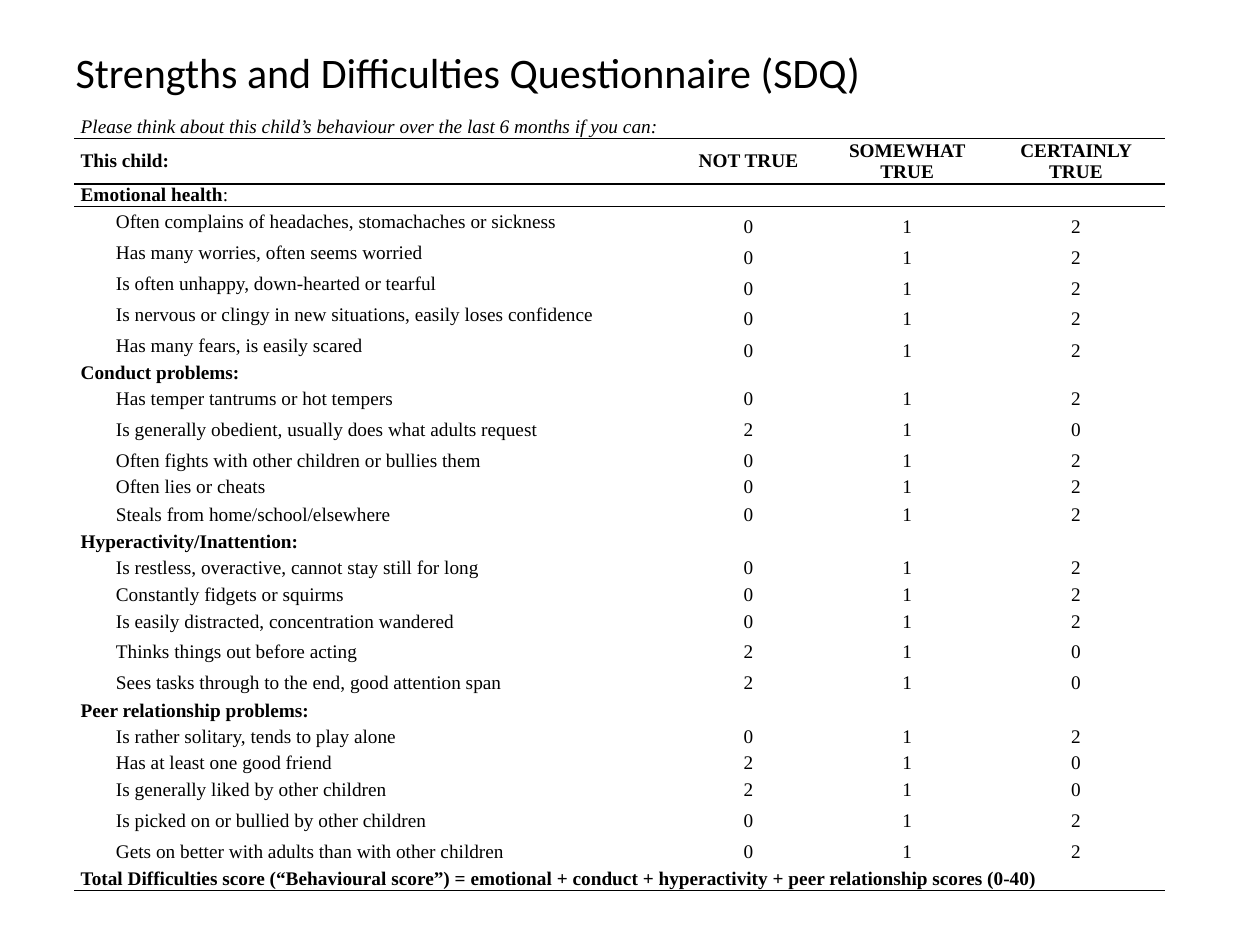
"""Build the Strengths and Difficulties Questionnaire slide."""
from itertools import cycle

from lxml.etree import SubElement
from pptx import Presentation
from pptx.dml.color import RGBColor
from pptx.enum.text import MSO_ANCHOR, PP_ALIGN
from pptx.oxml.ns import qn
from pptx.util import Inches, Pt

COLORS = {"text": "000000", "rule": "000000", "cell": "FFFFFF"}
NO_STYLE = "{2D5ABB26-0587-4C30-8999-92F81FD0307C}"
COLUMN_WIDTHS = [4.72, 1.26, 1.26, 1.42]
LINE_HEIGHT, HEADER_HEIGHT = 0.18, 0.36
INTRO = "Please think about this child’s behaviour over the last 6 months if you can:"
HEADERS = ["This child:", "NOT TRUE", "SOMEWHAT TRUE", "CERTAINLY TRUE"]
TOTAL = ("Total Difficulties score (“Behavioural score”) = emotional + conduct + "
         "hyperactivity + peer relationship scores (0-40)")
SCALES = {
    "Emotional health": [
        "Often complains of headaches, stomachaches or sickness",
        "Has many worries, often seems worried",
        "Is often unhappy, down-hearted or tearful",
        "Is nervous or clingy in new situations, easily loses confidence",
        "Has many fears, is easily scared",
    ],
    "Conduct problems": [
        "Has temper tantrums or hot tempers",
        "Is generally obedient, usually does what adults request",
        "Often fights with other children or bullies them",
        "Often lies or cheats",
        "Steals from home/school/elsewhere",
    ],
    "Hyperactivity/Inattention": [
        "Is restless, overactive, cannot stay still for long",
        "Constantly fidgets or squirms",
        "Is easily distracted, concentration wandered",
        "Thinks things out before acting",
        "Sees tasks through to the end, good attention span",
    ],
    "Peer relationship problems": [
        "Is rather solitary, tends to play alone",
        "Has at least one good friend",
        "Is generally liked by other children",
        "Is picked on or bullied by other children",
        "Gets on better with adults than with other children",
    ],
}
REVERSED = {
    "Is generally obedient, usually does what adults request",
    "Thinks things out before acting",
    "Sees tasks through to the end, good attention span",
    "Has at least one good friend",
    "Is generally liked by other children",
}
COMPACT = {"Often lies or cheats", "Constantly fidgets or squirms", "Has at least one good friend"}
BOTTOM_HEADINGS = {"Hyperactivity/Inattention", "Peer relationship problems"}


def add_text(p, text, font="Times New Roman", size=11, bold=False, italic=False,
             align=PP_ALIGN.LEFT, indent=0):
    """Add a formatted run to a paragraph."""
    p.alignment = align
    if indent:
        pPr = p._p.get_or_add_pPr()
        pPr.set("marL", str(Inches(indent)))
        pPr.set("indent", "0")
    r = p.add_run()
    r.text = text
    r.font.name, r.font.size = font, Pt(size)
    r.font.bold, r.font.italic = bold, italic
    r.font.color.rgb = RGBColor.from_string(COLORS["text"])


class SlideBuilder:
    """Hold the slide and its style, with a method for each kind of element."""

    def __init__(self, prs):
        """Add a title-only slide."""
        self.s = prs.slides.add_slide(prs.slide_layouts[5])
        self.rule_width = Pt(1)

    def title(self, text, x, y, w, h):
        """Place and fill the title placeholder."""
        sp = self.s.shapes.title
        sp.left, sp.top, sp.width, sp.height = (Inches(v) for v in (x, y, w, h))
        tf = sp.text_frame
        tf.word_wrap = True
        tf.vertical_anchor = MSO_ANCHOR.MIDDLE
        add_text(tf.paragraphs[0], text, font="Calibri", size=24)

    def table(self, x, y, widths, heights):
        """Add an unstyled table with the given grid."""
        table = self.s.shapes.add_table(
            len(heights), len(widths), Inches(x), Inches(y),
            Inches(sum(widths)), Inches(sum(heights))).table
        table.first_row = table.horz_banding = False
        table._tbl.tblPr.find(qn("a:tableStyleId")).text = NO_STYLE
        for column, width in zip(table.columns, widths):
            column.width = Inches(width)
        for row, height in zip(table.rows, heights):
            row.height = Inches(height)
        return table

    def rule(self, cell, side):
        """Draw a cell border on side T or B."""
        ln = SubElement(cell._tc.get_or_add_tcPr(), qn(f"a:ln{side}"), w=str(self.rule_width))
        fill = SubElement(ln, qn("a:solidFill"))
        SubElement(fill, qn("a:srgbClr"), val=COLORS["rule"])

    def cell(self, cell, text="", rules="", anchor=MSO_ANCHOR.MIDDLE, **fmt):
        """Format a cell and write its text."""
        cell.margin_left = cell.margin_right = Inches(0.05)
        cell.margin_top = cell.margin_bottom = 0
        cell.vertical_anchor = anchor
        for side in rules:
            self.rule(cell, side)
        cell.fill.solid()
        cell.fill.fore_color.rgb = RGBColor.from_string(COLORS["cell"])
        p = cell.text_frame.paragraphs[0]
        if text:
            add_text(p, text, **fmt)
        else:
            SubElement(p._p, qn("a:endParaRPr"), sz="1000")

    def banner(self, table, row, text, **fmt):
        """Write a row that spans the table and is ruled below."""
        cells = list(table.rows[row].cells)
        cells[0].merge(cells[-1])
        self.cell(cells[0], text, rules="B", **fmt)
        for cell in cells[1:]:
            self.cell(cell, rules="B")

    def heading(self, table, row, name, first):
        """Write the heading row of a scale."""
        cells = list(table.rows[row].cells)
        rules = "T" if first else ""
        anchor = MSO_ANCHOR.BOTTOM if name in BOTTOM_HEADINGS else MSO_ANCHOR.MIDDLE
        self.cell(cells[0], name, rules, anchor, bold=True)
        add_text(cells[0].text_frame.paragraphs[0], ":", bold=not first)
        for cell in cells[1:]:
            self.cell(cell, rules=rules)

    def item(self, table, row, text, anchor):
        """Write a statement and its three scores."""
        cells = list(table.rows[row].cells)
        self.cell(cells[0], text, indent=0.28)
        for cell, score in zip(cells[1:], "210" if text in REVERSED else "012"):
            self.cell(cell, score, anchor=anchor, align=PP_ALIGN.CENTER)


def row_heights():
    """Return the table's row heights in inches."""
    tall = cycle([0.25, 0.24])
    heights = [LINE_HEIGHT, HEADER_HEIGHT]
    for items in SCALES.values():
        heights.append(LINE_HEIGHT)
        heights += [LINE_HEIGHT if item in COMPACT else next(tall) for item in items]
    return heights + [LINE_HEIGHT]


def main():
    """Build and save the slide."""
    prs = Presentation()
    prs.slide_width, prs.slide_height = Inches(10), Inches(7.5)
    builder = SlideBuilder(prs)
    builder.title("Strengths and Difficulties Questionnaire (SDQ)", 0.5, 0.3, 9, 0.54)
    heights = row_heights()
    table = builder.table(0.59, 0.92, COLUMN_WIDTHS, heights)
    builder.banner(table, 0, INTRO, italic=True, align=PP_ALIGN.JUSTIFY)
    for col, text in enumerate(HEADERS):
        builder.cell(table.cell(1, col), text, rules="TB", bold=True,
                     align=PP_ALIGN.CENTER if col else PP_ALIGN.LEFT)
    row = 2
    for name, items in SCALES.items():
        first = row == 2
        builder.heading(table, row, name, first)
        anchor = MSO_ANCHOR.BOTTOM if first else MSO_ANCHOR.MIDDLE
        for row, text in enumerate(items, row + 1):
            builder.item(table, row, text, anchor)
        row += 1
    builder.banner(table, row, TOTAL, bold=True)
    prs.save("out.pptx")


if __name__ == "__main__":
    main()
